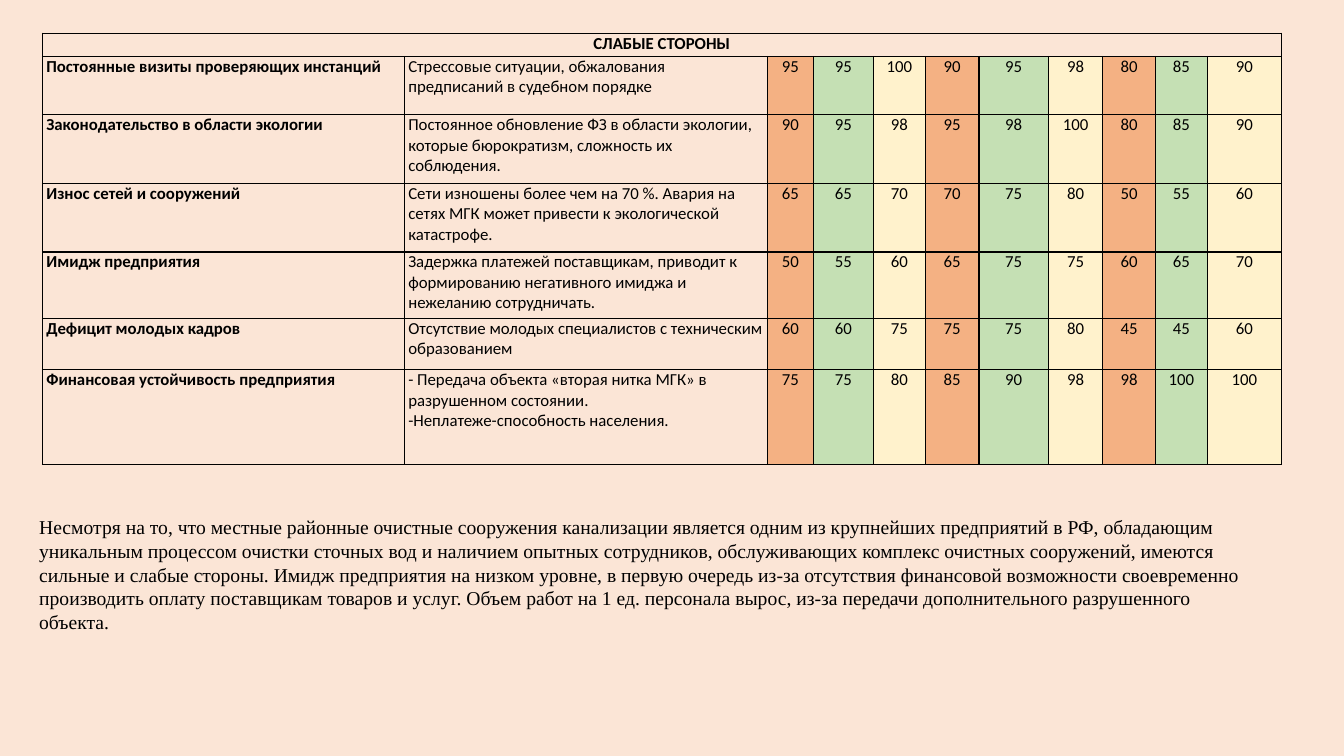
from lxml.etree import SubElement
from pptx import Presentation
from pptx.dml.color import RGBColor
from pptx.enum.text import MSO_ANCHOR, PP_ALIGN
from pptx.oxml.ns import qn
from pptx.util import Inches, Pt

PEACH = RGBColor(0xFB, 0xE5, 0xD6)
BLACK = RGBColor(0x00, 0x00, 0x00)
ORANGE = RGBColor(0xF4, 0xB1, 0x83)
GREEN = RGBColor(0xC5, 0xE0, 0xB4)
YELLOW = RGBColor(0xFF, 0xF2, 0xCC)
SCORE_FILLS = (ORANGE, GREEN, YELLOW)

# Table grid, in inches
COLUMNS = (3.59, 3.6, 0.46, 0.59, 0.52, 0.53, 0.69, 0.54, 0.52, 0.52, 0.73)
ROWS = (0.23, 0.58, 0.68, 0.68, 0.66, 0.51, 0.94)

HEADING = "СЛАБЫЕ СТОРОНЫ"
WEAKNESSES = (
    ("Постоянные визиты проверяющих инстанций",
     "Стрессовые ситуации, обжалования предписаний в судебном порядке",
     (95, 95, 100, 90, 95, 98, 80, 85, 90)),
    ("Законодательство в области экологии",
     "Постоянное обновление ФЗ в области экологии, которые бюрократизм, "
     "сложность их соблюдения.",
     (90, 95, 98, 95, 98, 100, 80, 85, 90)),
    ("Износ сетей и сооружений",
     "Сети изношены более чем на 70 %. Авария на сетях МГК может привести "
     "к экологической катастрофе.",
     (65, 65, 70, 70, 75, 80, 50, 55, 60)),
    ("Имидж предприятия",
     "Задержка платежей поставщикам, приводит к формированию негативного "
     "имиджа и нежеланию сотрудничать.",
     (50, 55, 60, 65, 75, 75, 60, 65, 70)),
    ("Дефицит молодых кадров",
     "Отсутствие молодых специалистов с техническим образованием",
     (60, 60, 75, 75, 75, 80, 45, 45, 60)),
    ("Финансовая устойчивость предприятия",
     "- Передача объекта «вторая нитка МГК» в разрушенном состоянии.\n"
     "-Неплатеже-способность населения.",
     (75, 75, 80, 85, 90, 98, 98, 100, 100)),
)
CONCLUSION = (
    "Несмотря на то, что местные районные очистные сооружения канализации "
    "является одним из крупнейших предприятий в РФ, обладающим уникальным "
    "процессом очистки сточных вод и наличием опытных сотрудников, "
    "обслуживающих комплекс очистных сооружений, имеются сильные и слабые "
    "стороны. Имидж предприятия на низком уровне, в первую очередь из-за "
    "отсутствия финансовой возможности своевременно производить оплату "
    "поставщикам товаров и услуг. Объем работ на 1 ед. персонала вырос, из-за "
    "передачи дополнительного разрушенного объекта."
)


def format_text(frame, font_name, size, bold=False, align=PP_ALIGN.LEFT):
    for para in frame.paragraphs:
        para.alignment = align
        font = para.font
        font.name, font.size, font.bold = font_name, Pt(size), bold
        font.color.rgb = BLACK


def add_borders(cell):
    properties = cell._tc.get_or_add_tcPr()
    for side in ("a:lnL", "a:lnR", "a:lnT", "a:lnB"):
        line = SubElement(properties, qn(side), w=str(Pt(1)))
        fill = SubElement(line, qn("a:solidFill"))
        SubElement(fill, qn("a:srgbClr"), val=str(BLACK))


def fill_cell(cell, text, bold=False, align=PP_ALIGN.LEFT, color=None):
    cell.margin_left = cell.margin_right = Inches(0.04)
    cell.margin_top = cell.margin_bottom = 0
    add_borders(cell)
    if color is None:
        cell.fill.background()
    else:
        cell.fill.solid()
        cell.fill.fore_color.rgb = color
    cell.text = text
    format_text(cell.text_frame, "Calibri", 12, bold, align)


def add_weakness_table(page):
    frame = page.shapes.add_table(
        len(ROWS), len(COLUMNS), Inches(0.42), Inches(0.33),
        Inches(sum(COLUMNS)), Inches(sum(ROWS)))
    table = frame.table
    table.first_row = table.horz_banding = False
    for column, width in zip(table.columns, COLUMNS):
        column.width = Inches(width)
    for row, height in zip(table.rows, ROWS):
        row.height = Inches(height)

    # Heading across all columns
    for index in range(len(COLUMNS)):
        fill_cell(table.cell(0, index), "" if index else HEADING,
                  bold=True, align=PP_ALIGN.CENTER)
    table.cell(0, 0).merge(table.cell(0, len(COLUMNS) - 1))

    # Weaknesses with their scores
    for row, (name, detail, scores) in enumerate(WEAKNESSES, start=1):
        fill_cell(table.cell(row, 0), name, bold=True)
        fill_cell(table.cell(row, 1), detail)
        for index, score in enumerate(scores):
            fill_cell(table.cell(row, index + 2), str(score),
                      align=PP_ALIGN.CENTER,
                      color=SCORE_FILLS[index % len(SCORE_FILLS)])


def add_conclusion(page):
    box = page.shapes.add_textbox(
        Inches(0.29), Inches(4.6), Inches(12.23), Inches(1.73))
    frame = box.text_frame
    frame.word_wrap = True
    frame.vertical_anchor = MSO_ANCHOR.BOTTOM
    frame.text = CONCLUSION
    format_text(frame, "Times New Roman", 14)


def main():
    deck = Presentation()
    deck.slide_width, deck.slide_height = Inches(13.33), Inches(7.5)
    page = deck.slides.add_slide(deck.slide_layouts[6])
    page.background.fill.solid()
    page.background.fill.fore_color.rgb = PEACH
    add_weakness_table(page)
    add_conclusion(page)
    deck.save("out.pptx")


if __name__ == "__main__":
    main()
